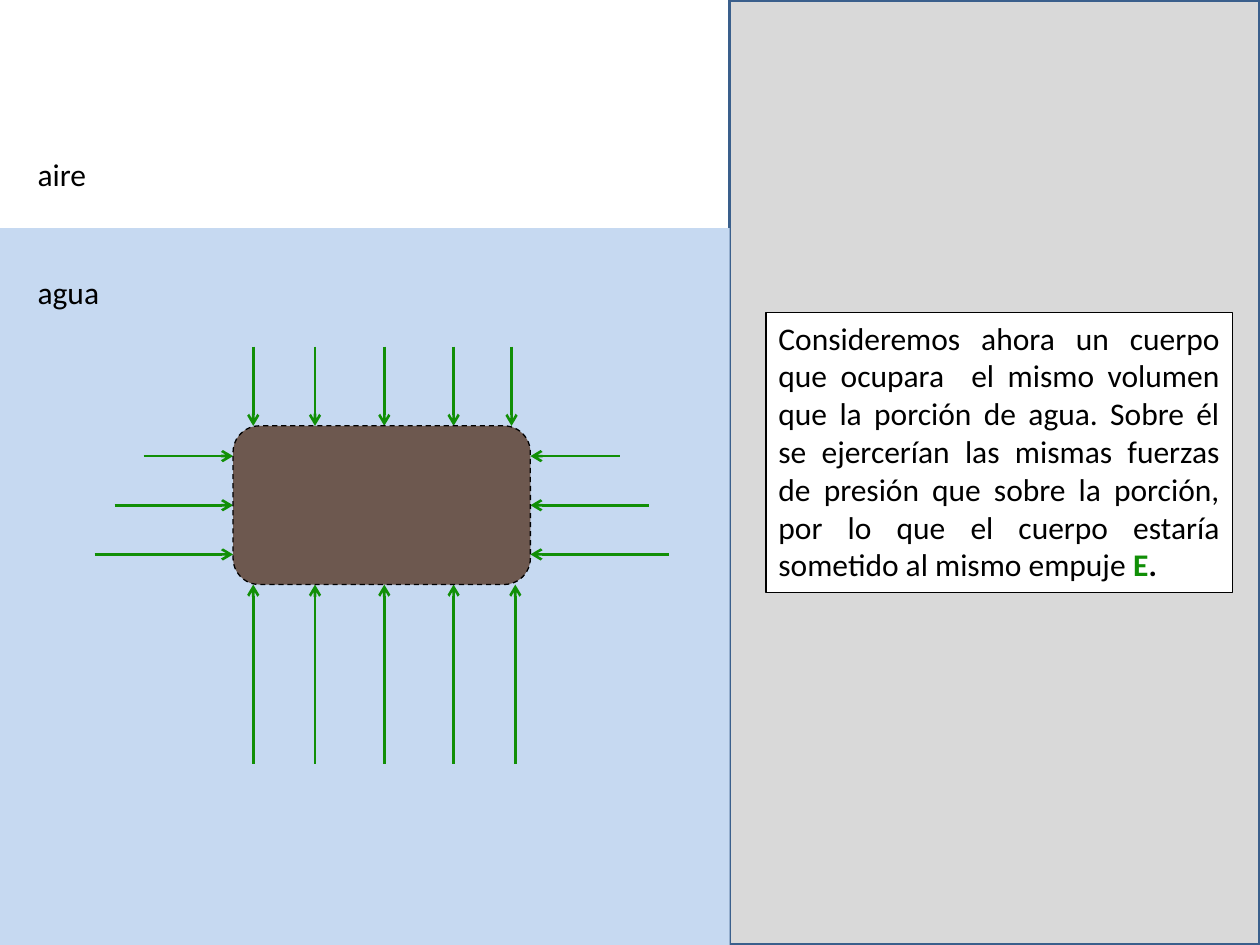
from lxml import etree
from pptx import Presentation
from pptx.dml.color import RGBColor
from pptx.enum import dml, shapes, text
from pptx.oxml.ns import qn
from pptx.util import Inches, Pt

BLACK, WHITE, GREEN = "000000", "FFFFFF", "118F07"
GREY, BLUE, WATER, BROWN = "D9D9D9", "3A5F8C", "C6D9F1", "6D584F"
RECT, ROUND = shapes.MSO_SHAPE.RECTANGLE, shapes.MSO_SHAPE.ROUNDED_RECTANGLE

EXPLANATION = [
    ("Consideremos ahora un cuerpo que ocupara  el mismo volumen que la "
     "porción de agua. Sobre él se ejercerían las mismas fuerzas de presión "
     "que sobre la porción, por lo que el cuerpo estaría sometido al mismo "
     "empuje ", BLACK, False),
    ("E", GREEN, True),
    (".", BLACK, True),
]
MEDIA = [("aire", 1.18), ("agua", 2.12)]  # label, top

BODY_LEFT, BODY_TOP, BODY_WIDTH, BODY_HEIGHT = 1.85, 3.38, 2.36, 1.26
BODY_RIGHT, BODY_BOTTOM = BODY_LEFT + BODY_WIDTH, BODY_TOP + BODY_HEIGHT
COLUMNS = [2.01, 2.5, 3.05, 3.6]
SIDE_FORCES = [(3.62, 0.71), (4.01, 0.94), (4.4, 1.1)]  # height, length
FORCES = [  # one list of (start, end) for each face of the body
    [((x, 6.06), (x, BODY_BOTTOM)) for x in COLUMNS + [4.09]],
    [((x, 2.75), (x, BODY_TOP)) for x in COLUMNS + [4.06]],
    [((BODY_LEFT - n, y), (BODY_LEFT, y)) for y, n in SIDE_FORCES],
    [((BODY_RIGHT + n, y), (BODY_RIGHT, y)) for y, n in SIDE_FORCES],
]


def rgb(value):
    return RGBColor.from_string(value)


def add_area(slide, kind, box, fill=None, line=None, width=0.75, dash=None):
    area = slide.shapes.add_shape(kind, *map(Inches, box))
    area.shadow.inherit = False
    if fill:
        area.fill.solid()
        area.fill.fore_color.rgb = rgb(fill)
    else:
        area.fill.background()
    if line:
        area.line.color.rgb = rgb(line)
        area.line.width = Pt(width)
        area.line.dash_style = dash
    else:
        area.line.fill.background()
    return area


def add_runs(paragraph, runs):
    for words, color, bold in runs:
        run = paragraph.add_run()
        run.text = words
        font_format = {"name": "Calibri", "size": Pt(18), "bold": bold}
        for attribute, value in font_format.items():
            setattr(run.font, attribute, value)
        run.font.color.rgb = rgb(color)


def add_force(group, start, end):
    force = group.shapes.add_connector(
        shapes.MSO_CONNECTOR.STRAIGHT, *map(Inches, start + end))
    force.line.color.rgb = rgb(GREEN)
    force.line.width = Pt(1.5)
    etree.SubElement(force.line._get_or_add_ln(), qn("a:tailEnd"), type="arrow")
    etree.SubElement(force._element.spPr, qn("a:effectLst"))


def main():
    deck = Presentation()
    deck.slide_width, deck.slide_height = Inches(10), Inches(7.5)
    slide = deck.slides.add_slide(deck.slide_layouts[6])

    add_area(slide, RECT, (5.79, 0, 4.21, 7.5), GREY, BLUE, 2)
    note = add_area(slide, RECT, (6.08, 2.48, 3.7, 2.22), WHITE, BLACK)
    note.text_frame.word_wrap = True
    note.text_frame.vertical_anchor = text.MSO_ANCHOR.TOP
    paragraph = note.text_frame.paragraphs[0]
    paragraph.alignment = text.PP_ALIGN.JUSTIFY
    add_runs(paragraph, EXPLANATION)

    add_area(slide, RECT, (0, 1.81, 5.79, 5.69), WATER)
    for medium, top in MEDIA:
        label = slide.shapes.add_textbox(*map(Inches, (0.2, top, 0.71, 0.4)))
        label.text_frame.word_wrap = True
        add_runs(label.text_frame.paragraphs[0], [(medium, BLACK, False)])

    body = (BODY_LEFT, BODY_TOP, BODY_WIDTH, BODY_HEIGHT)
    add_area(slide, ROUND, body, BROWN)
    for face in FORCES:
        group = slide.shapes.add_group_shape()
        for start, end in face:
            add_force(group, start, end)
    add_area(slide, ROUND, body, line=BLACK, dash=dml.MSO_LINE.DASH)

    deck.save("out.pptx")


if __name__ == "__main__":
    main()
